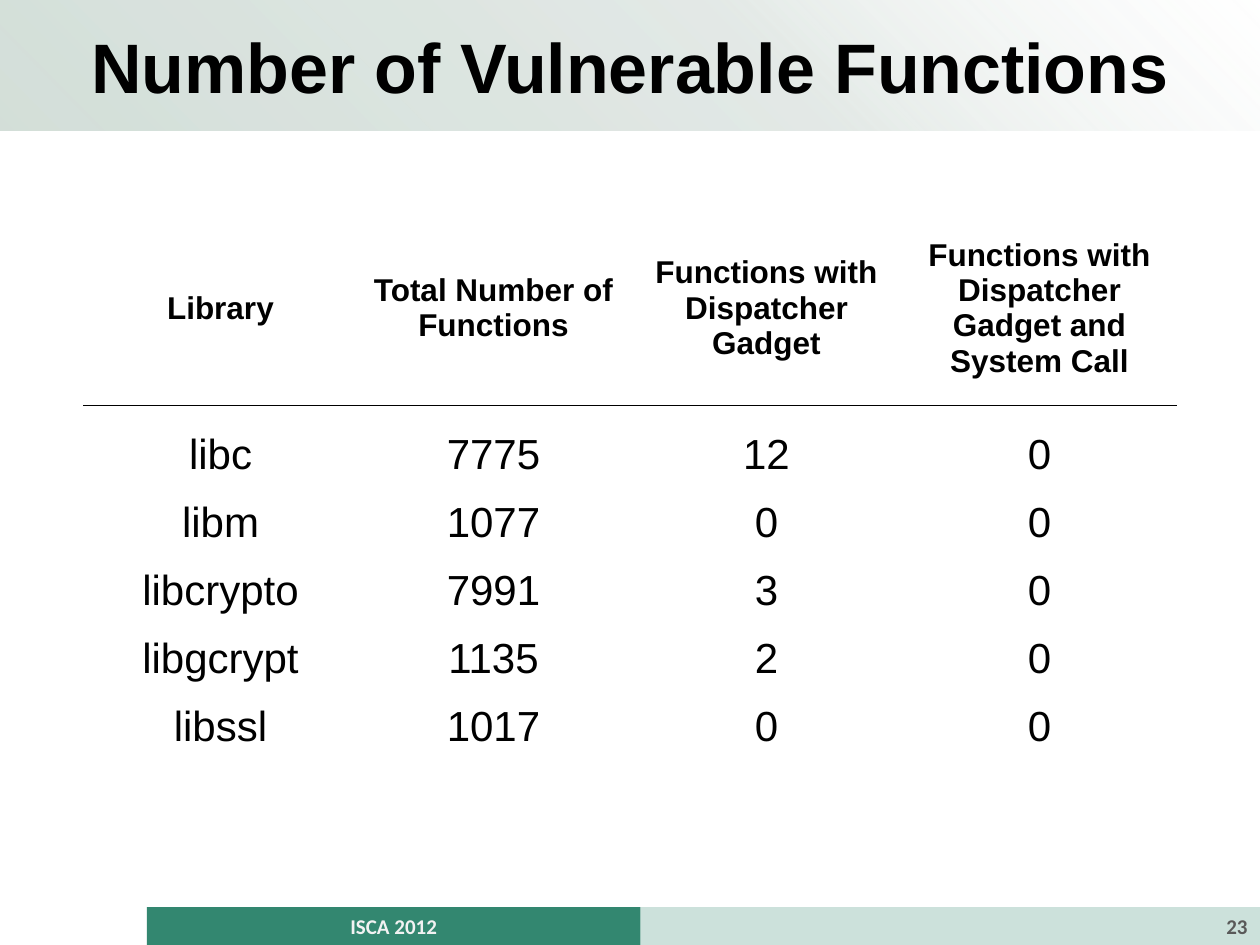
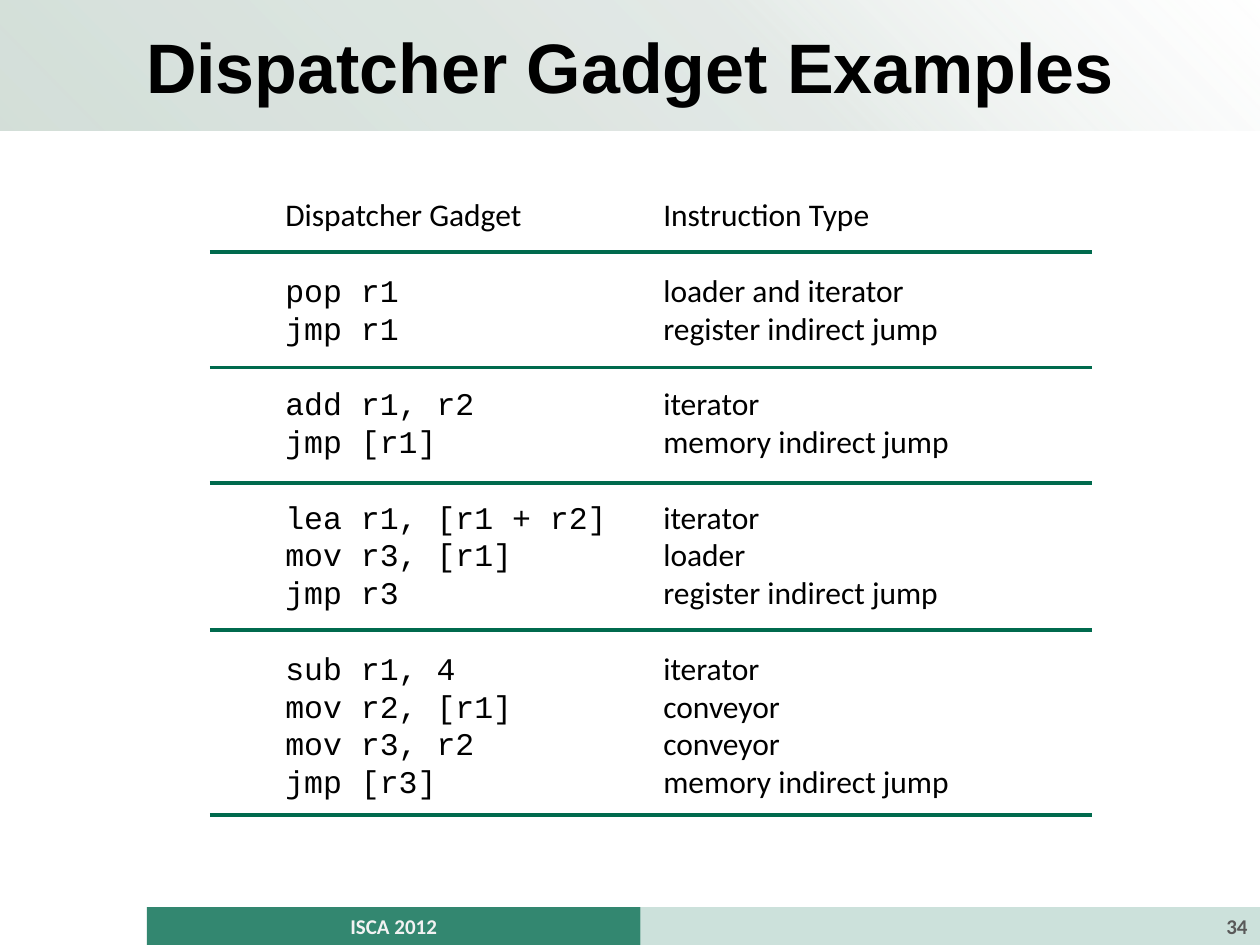
import pptx
import pptx.dml.color
import pptx.enum.shapes
import pptx.enum.text
import pptx.oxml
import pptx.oxml.ns
import pptx.util
from lxml import etree

UNIT = pptx.util.Inches(10) // 60  # slide grid: 60 columns by 45 rows
COLUMNS, ROWS = 60, 45
GREEN, BLACK, WHITE, PALE, GREY = "006A4D", "000000", "FFFFFF", "F2F2F2", "595959"
BAND_STOPS = [(0, "9BB5A8", 44), (61, "C3D1CA", 45), (100, "E2E8E5", 0)]
LINE_PITCH = pptx.util.Pt(21.6)
ALIGN = pptx.enum.text.PP_ALIGN
ANCHOR = pptx.enum.text.MSO_ANCHOR

LIBRARY_COUNTS = [
    ("Library", "libc", "libm", "libcrypto", "libgcrypt", "libssl"),
    ("Total Number of Functions", "7775", "1077", "7991", "1135", "1017"),
    ("Functions with Dispatcher Gadget", "12", "0", "3", "2", "0"),
    ("Functions with Dispatcher Gadget and System Call", "0", "0", "0", "0", "0"),
]
GADGETS = [
    [("pop r1", "loader and iterator"), ("jmp r1", "register indirect jump")],
    [("add r1, r2", "iterator"), ("jmp [r1]", "memory indirect jump")],
    [("lea r1, [r1 + r2]", "iterator"), ("mov r3, [r1]", "loader"),
     ("jmp r3", "register indirect jump")],
    [("sub r1, 4", "iterator"), ("mov r2, [r1]", "conveyor"),
     ("mov r3, r2", "conveyor"), ("jmp [r3]", "memory indirect jump")],
]


def grid(*counts):
    return [round(count * UNIT) for count in counts]


def rgb(color):
    return pptx.dml.color.RGBColor.from_string(color)


def drawing_xml(body, tag, attributes=""):
    namespace = pptx.oxml.ns.nsdecls("a")
    return pptx.oxml.parse_xml(f"<a:{tag} {namespace} {attributes}>{body}</a:{tag}>")


def translucent(color, opacity):
    return f'<a:srgbClr val="{color}"><a:alpha val="{opacity * 1000}"/></a:srgbClr>'


def style(paragraph, size, font, color=BLACK, bold=False, align=ALIGN.LEFT):
    paragraph.alignment = align
    paragraph.font.size = pptx.util.Pt(size)
    paragraph.font.name = font
    paragraph.font.bold = bold
    paragraph.font.color.rgb = rgb(color)


def add_band(slide, box, fill, text, **text_style):
    """Borderless rectangle with one line of text over a ready-made fill element."""
    band = slide.shapes.add_shape(pptx.enum.shapes.MSO_SHAPE.RECTANGLE, *grid(*box))
    band.shadow.inherit = False
    band.line.fill.background()
    band.fill.background()
    no_fill = band.element.spPr.find(pptx.oxml.ns.qn("a:noFill"))
    band.element.spPr.replace(no_fill, fill)
    band.text_frame.word_wrap = True
    band.text_frame.vertical_anchor = ANCHOR.MIDDLE
    band.text_frame.text = text
    style(band.text_frame.paragraphs[0], bold=True, **text_style)


def add_title(slide, text):
    stops = "".join(f'<a:gs pos="{position * 1000}">{translucent(color, opacity)}</a:gs>'
                    for position, color, opacity in BAND_STOPS)
    gradient = drawing_xml(
        f'<a:gsLst>{stops}</a:gsLst><a:path path="circle">'
        '<a:fillToRect t="100000" r="100000"/></a:path>', "gradFill", 'rotWithShape="1"')
    add_band(slide, (0, 0, COLUMNS, 6.2), gradient, text,
             size=40, font="Arial", align=ALIGN.CENTER)


def add_footer(slide, number):
    left, split, top = 7, 30.5, 43.2
    parts = [(left, split, 80, "ISCA 2012", PALE, ALIGN.CENTER),
             (split, COLUMNS, 20, number, GREY, ALIGN.RIGHT)]
    for start, end, opacity, text, color, align in parts:
        add_band(slide, (start, top, end - start, ROWS - top),
                 drawing_xml(translucent(GREEN, opacity), "solidFill"), text,
                 size=12, font="Calibri", color=color, align=align)


def add_slide(deck, title, number):
    slide = deck.slides.add_slide(deck.slide_layouts[6])
    add_title(slide, title)
    add_footer(slide, number)
    return slide


def set_borders(cell, row_index):
    """White edges, with black ones between the header and the first row."""
    black_side = {0: "lnB", 1: "lnT"}.get(row_index)
    for position, side in enumerate(("lnL", "lnR", "lnT", "lnB")):
        color = BLACK if side == black_side else WHITE
        line = drawing_xml(f'<a:solidFill><a:srgbClr val="{color}"/></a:solidFill>',
                           side, 'w="12700"')
        cell._tc.get_or_add_tcPr().insert(position, line)


def add_count_column(slide, box, values):
    """One-column table: a tall header above the values of the libraries."""
    header_height, first_height, row_height = 9.3, 3.5, 3.24
    heights = [header_height, first_height] + [row_height] * (len(values) - 2)
    table = slide.shapes.add_table(len(values), 1, *grid(*box)).table
    table.first_row = table.horz_banding = False
    for row_index, (value, height) in enumerate(zip(values, heights)):
        table.rows[row_index].height = round(height * UNIT)
        is_header = row_index == 0
        cell = table.cell(row_index, 0)
        cell.fill.background()
        cell.margin_left = cell.margin_right = cell.margin_top = pptx.util.Inches(0.01)
        cell.margin_bottom = 0
        cell.vertical_anchor = ANCHOR.MIDDLE if is_header else ANCHOR.BOTTOM
        cell.text = value
        style(cell.text_frame.paragraphs[0], 18 if is_header else 24, "Arial",
              bold=is_header, align=ALIGN.CENTER)
        set_borders(cell, row_index)


def add_library_counts(slide, box):
    left, top, width, height = box
    column_width = width / len(LIBRARY_COUNTS)
    for index, values in enumerate(LIBRARY_COUNTS):
        add_count_column(slide, (left + index * column_width, top, column_width, height),
                         values)


def add_listing(slide, box, heading, groups, font):
    """Heading and groups of lines, with one line of space above each group."""
    frame = slide.shapes.add_textbox(*grid(*box)).text_frame
    frame.word_wrap = True
    frame.text = heading
    style(frame.paragraphs[0], 18, "Calibri")
    for group in groups:
        for index, text in enumerate(group):
            paragraph = frame.add_paragraph()
            paragraph.text = text
            paragraph.space_before = 0 if index else LINE_PITCH
            style(paragraph, 18, font)
    for paragraph in frame.paragraphs:
        paragraph.line_spacing = LINE_PITCH


def add_rule(slide, left, top, width):
    rule = slide.shapes.add_connector(pptx.enum.shapes.MSO_CONNECTOR.STRAIGHT,
                                      *grid(left, top, left + width, top))
    rule.line.color.rgb = rgb(GREEN)
    rule.line.width = pptx.util.Pt(2)
    etree.SubElement(rule._element.spPr, pptx.oxml.ns.qn("a:effectLst"))


def add_gadget_listing(slide, box):
    left, top, width, height = box
    listings = [(3, 30, "Dispatcher Gadget", "Courier New"),
                (21, 17.5, "Instruction Type", "Calibri")]
    for part, (offset, listing_width, heading, font) in enumerate(listings):
        groups = [[line[part] for line in group] for group in GADGETS]
        add_listing(slide, (left + offset, top, listing_width, height),
                    heading, groups, font)
    for offset in (3, 8.5, 14, 21, 29.82):
        add_rule(slide, left, top + offset, width)


def main():
    deck = pptx.Presentation()
    deck.slide_width, deck.slide_height = grid(COLUMNS, ROWS)
    functions = add_slide(deck, "Number of Vulnerable Functions", "23")
    add_library_counts(functions, (4, 10, 52, 25.76))
    examples = add_slide(deck, "Dispatcher Gadget Examples", "34")
    add_gadget_listing(examples, (10, 9, 42, 29.7))
    deck.save("out.pptx")


if __name__ == "__main__":
    main()
